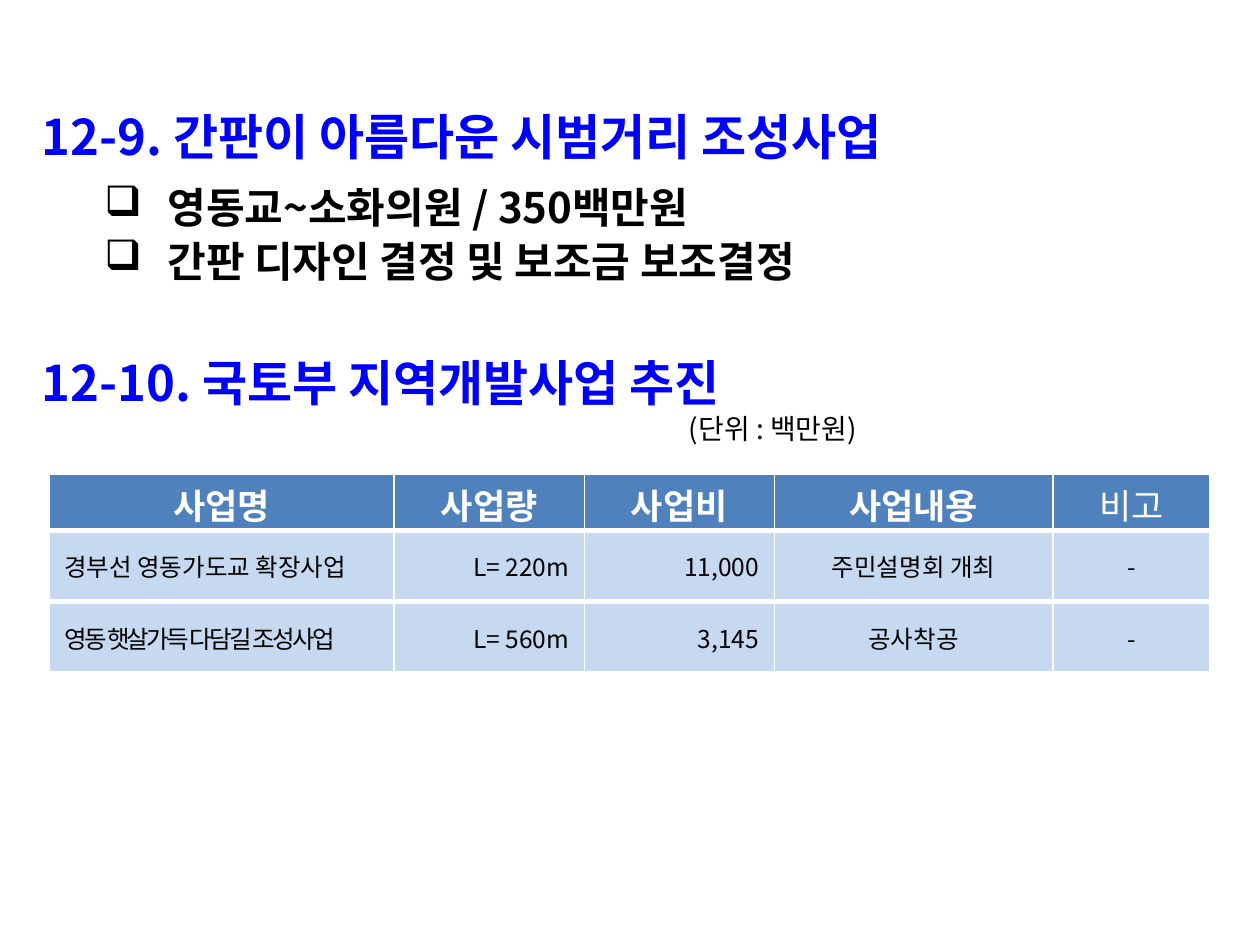
from dataclasses import dataclass

from lxml.etree import SubElement
from pptx import Presentation
from pptx.dml.color import RGBColor
from pptx.enum.text import MSO_ANCHOR, MSO_AUTO_SIZE, PP_ALIGN
from pptx.oxml import parse_xml
from pptx.oxml.ns import nsdecls, qn
from pptx.util import Pt

FONT = "Noto Sans CJK KR"
BLUE = RGBColor(0x00, 0x00, 0xFF)
BLACK = RGBColor(0x00, 0x00, 0x00)
WHITE = RGBColor(0xFF, 0xFF, 0xFF)
HEADER_FILL = RGBColor(0x4F, 0x81, 0xBD)
BODY_FILL = RGBColor(0xC6, 0xD9, 0xF1)
LEFT, CENTER, RIGHT = PP_ALIGN.LEFT, PP_ALIGN.CENTER, PP_ALIGN.RIGHT


@dataclass(frozen=True)
class Style:
    size: float
    color: RGBColor
    bold: bool = False
    spacing: float = 0


@dataclass(frozen=True)
class Area:
    left: float
    top: float
    width: float
    height: float


@dataclass(frozen=True)
class Column:
    heading: str
    width: float
    align: PP_ALIGN
    bold: bool = True


HEADING = Style(28, BLUE, True)
BULLET = Style(24, BLACK, True)
UNIT = Style(16, BLACK)
BODY = Style(14, BLACK)
TIGHT = Style(14, BLACK, spacing=-1.5)

COLUMNS = [
    Column("사업명", 197.2, LEFT),
    Column("사업량", 108.6, RIGHT),
    Column("사업비", 108.6, RIGHT),
    Column("사업내용", 159.2, CENTER),
    Column("비고", 89.9, CENTER, bold=False),
]
PROJECTS = [
    ["경부선 영동가도교 확장사업", "L= 220m", "11,000", "주민설명회 개최", "-"],
    ["영동 햇살가득 다담길 조성사업", "L= 560m", "3,145", "공사착공", "-"],
]
HEADER_HEIGHT, ROW_HEIGHT = 33.1, 40.8


def write(paragraph, text: str, style: Style, align=LEFT) -> None:
    paragraph.alignment = align
    run = paragraph.add_run()
    run.text = text
    formats = {"name": FONT, "size": Pt(style.size), "bold": style.bold}
    for attribute, value in formats.items():
        setattr(run.font, attribute, value)
    run.font.color.rgb = style.color
    properties = run.font._element
    SubElement(properties, qn("a:ea")).set("typeface", FONT)
    if style.spacing:
        properties.set("spc", str(round(style.spacing * 100)))


def place(shape, area: Area):
    for attribute in ("left", "top", "width", "height"):
        setattr(shape, attribute, Pt(getattr(area, attribute)))
    frame = shape.text_frame
    formats = {
        "word_wrap": True, "auto_size": MSO_AUTO_SIZE.NONE,
        "vertical_anchor": MSO_ANCHOR.TOP,
        "margin_left": Pt(7.2), "margin_right": Pt(7.2),
        "margin_top": Pt(3.6), "margin_bottom": Pt(3.6),
    }
    for attribute, value in formats.items():
        setattr(frame, attribute, value)
    return frame


def add_text_area(slide, area: Area):
    return place(slide.shapes.add_textbox(0, 0, 0, 0), area)


def add_bullets(frame, lines: list[str]) -> None:
    for index, line in enumerate(lines):
        paragraph = frame.paragraphs[0] if index == 0 else frame.add_paragraph()
        paragraph.line_spacing = 1.07
        properties = paragraph._p.get_or_add_pPr()
        properties.set("marL", str(Pt(72)))
        properties.set("indent", str(Pt(-36)))
        SubElement(properties, qn("a:buChar")).set("char", "❑")
        write(paragraph, line, BULLET)


def add_borders(cell) -> None:
    properties = cell._tc.get_or_add_tcPr()
    for index, (side, width) in enumerate({"L": 1, "R": 1, "T": 3, "B": 3}.items()):
        properties.insert(index, parse_xml(
            f'<a:ln{side} {nsdecls("a")} w="{Pt(width)}"><a:solidFill>'
            f'<a:srgbClr val="{WHITE}"/></a:solidFill></a:ln{side}>'))


def fill_cell(cell, text: str, style: Style, align, color: RGBColor, side_margin, bottom_margin) -> None:
    formats = {
        "vertical_anchor": MSO_ANCHOR.MIDDLE,
        "margin_left": Pt(side_margin), "margin_right": Pt(side_margin),
        "margin_top": Pt(3.6), "margin_bottom": Pt(bottom_margin),
    }
    for attribute, value in formats.items():
        setattr(cell, attribute, value)
    cell.fill.solid()
    cell.fill.fore_color.rgb = color
    add_borders(cell)
    write(cell.text_frame.paragraphs[0], text, style, align)


def add_project_table(slide, left: float, top: float) -> None:
    width = sum(column.width for column in COLUMNS)
    height = HEADER_HEIGHT + ROW_HEIGHT * len(PROJECTS)
    table = slide.shapes.add_table(
        len(PROJECTS) + 1, len(COLUMNS), Pt(left), Pt(top), Pt(width), Pt(height)).table
    for index, row in enumerate(table.rows):
        row.height = Pt(ROW_HEIGHT if index else HEADER_HEIGHT)
    for c, column in enumerate(COLUMNS):
        table.columns[c].width = Pt(column.width)
        fill_cell(table.cell(0, c), column.heading, Style(20, WHITE, column.bold),
                  CENTER, HEADER_FILL, 7.2, 0)
        for r, project in enumerate(PROJECTS, 1):
            style = TIGHT if (r, c) == (2, 0) else BODY
            fill_cell(table.cell(r, c), project[c], style, column.align, BODY_FILL, 8.6, 3.6)


def main() -> None:
    presentation = Presentation()
    presentation.slide_width, presentation.slide_height = Pt(720), Pt(540)
    slide = presentation.slides.add_slide(presentation.slide_layouts[5])

    # Sign improvement project
    sign_heading = place(slide.shapes.title, Area(16.6, 57.5, 692, 48))
    write(sign_heading.paragraphs[0], "12-9. 간판이 아름다운 시범거리 조성사업", HEADING)
    sign_details = add_text_area(slide, Area(16.6, 98, 692, 84))
    add_bullets(sign_details, ["영동교~소화의원 / 350백만원", "간판 디자인 결정 및 보조금 보조결정"])

    # Regional development heading with the unit of the table
    region = add_text_area(slide, Area(16.6, 198, 680.4, 72))
    write(region.paragraphs[0], "12-10. 국토부 지역개발사업 추진", HEADING)
    unit = region.add_paragraph()
    unit._p.get_or_add_pPr().set("marL", str(Pt(370)))
    write(unit, "(단위 : 백만원)", UNIT)

    # Regional development projects
    add_project_table(slide, 28.1, 270)
    presentation.save("out.pptx")


if __name__ == "__main__":
    main()
